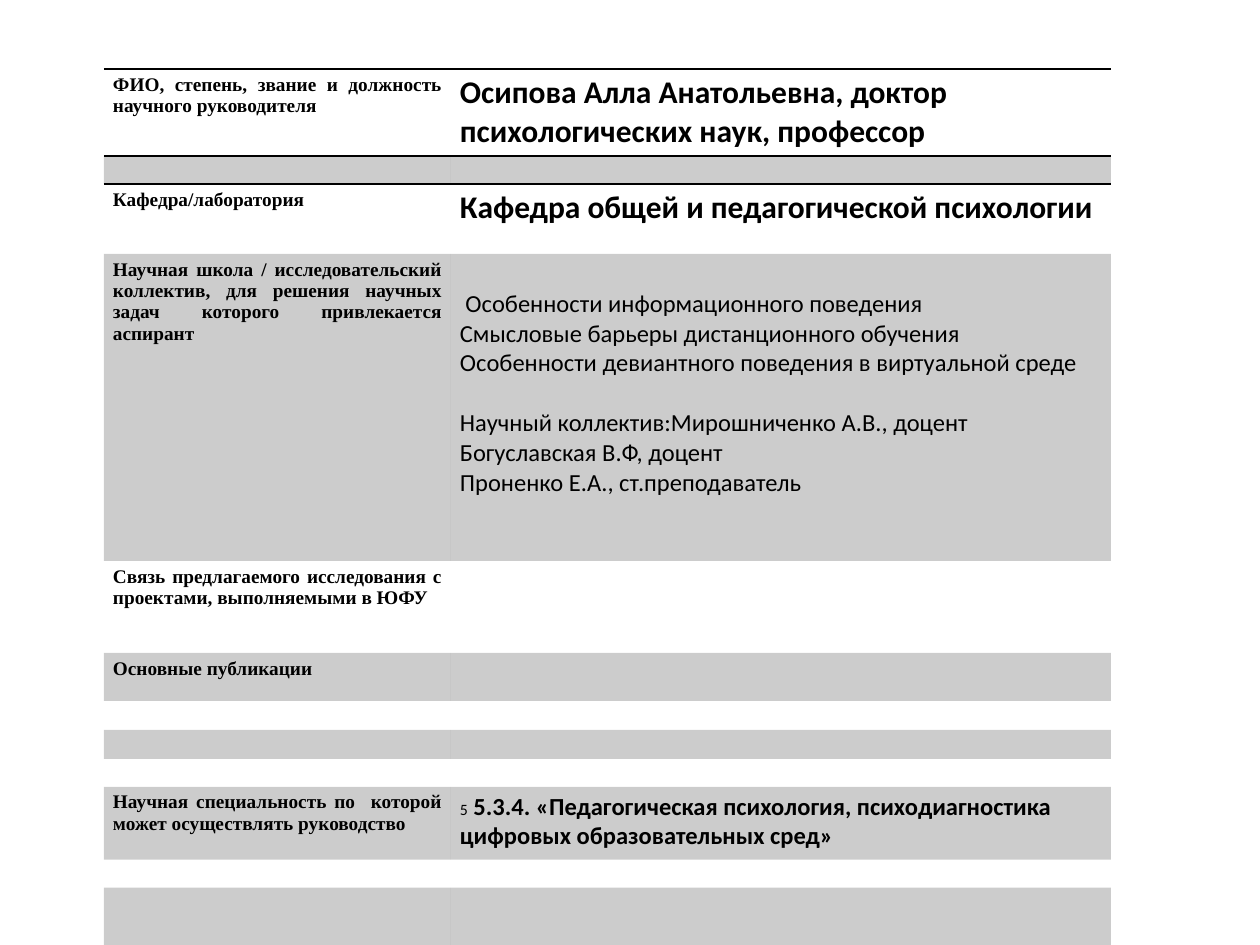
from dataclasses import dataclass

from lxml.etree import SubElement
from pptx import Presentation
from pptx.dml.color import RGBColor
from pptx.enum.text import PP_ALIGN
from pptx.oxml.ns import qn
from pptx.util import Emu, Pt

PX = 914400 // 126  # one scale: 126 px to the inch
BLACK = "000000"
LABEL_FONT, BODY_FONT = "Times New Roman", "Calibri"
NO_STYLE_NO_GRID = "{2D5ABB26-0587-4C30-8999-92F81FD0307C}"
LEFT, TOP = 104, 69
COLUMN_WIDTHS = (347, 660)
LINE_GAP = Pt(17)  # one line of 14 pt text


@dataclass
class Row:
    height: int
    label: str = ""
    lines: tuple[str, ...] = ()
    size: int = 14
    bold: bool = False
    lead: str = ""  # small text before the first line
    top_gap: int = 0  # extra space above the body text
    gap_before: int = 0  # index of a line that starts a new group


ROWS = [
    Row(87, "ФИО, степень, звание и должность научного руководителя",
        ("Осипова Алла Анатольевна, доктор психологических наук, профессор",), 18, True),
    Row(28),
    Row(70, "Кафедра/лаборатория", ("Кафедра общей и педагогической психологии",), 18, True),
    Row(307, "Научная школа / исследовательский коллектив, для решения научных задач "
        "которого привлекается аспирант",
        (" Особенности информационного поведения",
         "Смысловые барьеры дистанционного обучения",
         "Особенности девиантного поведения в виртуальной среде",
         "Научный коллектив:Мирошниченко А.В., доцент",
         "Богуславская В.Ф, доцент",
         "Проненко Е.А., ст.преподаватель"), top_gap=30, gap_before=3),
    Row(92, "Связь предлагаемого исследования с проектами, выполняемыми в ЮФУ"),
    Row(48, "Основные публикации"),
    Row(29),
    Row(29),
    Row(28),
    Row(73, "Научная специальность по  которой может осуществлять руководство",
        ("5.3.4. «Педагогическая психология, психодиагностика цифровых образовательных сред»",),
        bold=True, lead="5"),
    Row(28),
    Row(60),
]
MERGED_ROW = 6
# Row index -> sides that carry a rule
RULES = {0: ("lnT", "lnB"), 1: ("lnT",), len(ROWS) - 1: ("lnB",)}


def px(value: int) -> Emu:
    return Emu(value * PX)


def color(value: str) -> RGBColor:
    return RGBColor.from_string(value)


def format_font(font, name: str, size: int, bold: bool) -> None:
    font.name, font.size, font.bold = name, Pt(size), bold
    font.color.rgb = color(BLACK)


def draw_rule(cell, side: str) -> None:
    line = SubElement(cell._tc.get_or_add_tcPr(), qn(f"a:{side}"), w=str(Pt(1)))
    fill = SubElement(line, qn("a:solidFill"))
    SubElement(fill, qn("a:srgbClr"), val=BLACK)


def shade(cell) -> None:
    """Fill with black at 20 % opacity."""
    cell.fill.solid()
    cell.fill.fore_color.rgb = color(BLACK)
    tint = cell._tc.tcPr.find(qn("a:solidFill")).find(qn("a:srgbClr"))
    SubElement(tint, qn("a:alpha"), val="20000")


def write_label(cell, text: str) -> None:
    paragraph = cell.text_frame.paragraphs[0]
    paragraph.text = text
    paragraph.alignment = PP_ALIGN.JUSTIFY
    format_font(paragraph.font, LABEL_FONT, 11, True)


def write_body(cell, row: Row) -> None:
    cell.margin_top = px(5 + row.top_gap)
    frame = cell.text_frame
    for index, text in enumerate(row.lines):
        paragraph = frame.add_paragraph() if index else frame.paragraphs[0]
        if index and index == row.gap_before:
            paragraph.space_before = LINE_GAP
        format_font(paragraph.font, BODY_FONT, row.size, row.bold)
        if row.lead and index == 0:
            lead = paragraph.add_run()
            lead.text = row.lead
            format_font(lead.font, BODY_FONT, 9, False)
            text = " " + text
        paragraph.add_run().text = text


def keep_low(cell) -> None:
    """Let an empty cell be as low as its row."""
    SubElement(cell.text_frame.paragraphs[0]._p, qn("a:endParaRPr"), sz="800")


def draw_table(slide) -> None:
    frame = slide.shapes.add_table(
        len(ROWS), len(COLUMN_WIDTHS), px(LEFT), px(TOP),
        px(sum(COLUMN_WIDTHS)), px(sum(row.height for row in ROWS)))
    table = frame.table
    table.first_row = table.horz_banding = False
    table._tbl.tblPr.find(qn("a:tableStyleId")).text = NO_STYLE_NO_GRID
    for column, width in zip(table.columns, COLUMN_WIDTHS):
        column.width = px(width)

    for index, row in enumerate(ROWS):
        table.rows[index].height = px(row.height)
        label, body = table.cell(index, 0), table.cell(index, 1)
        for cell in (label, body):
            cell.margin_left = cell.margin_right = px(9)
            cell.margin_top = cell.margin_bottom = px(5)
            for side in RULES.get(index, ()):
                draw_rule(cell, side)
            # Every second row is grey
            if index % 2:
                shade(cell)
            else:
                cell.fill.background()
        if row.label:
            write_label(label, row.label)
        else:
            keep_low(label)
        if row.lines:
            write_body(body, row)
        else:
            keep_low(body)
    table.cell(MERGED_ROW, 0).merge(table.cell(MERGED_ROW, 1))


def main() -> None:
    presentation = Presentation()
    presentation.slide_width, presentation.slide_height = px(1260), px(945)
    slide = presentation.slides.add_slide(presentation.slide_layouts[6])
    draw_table(slide)
    presentation.save("out.pptx")


if __name__ == "__main__":
    main()
